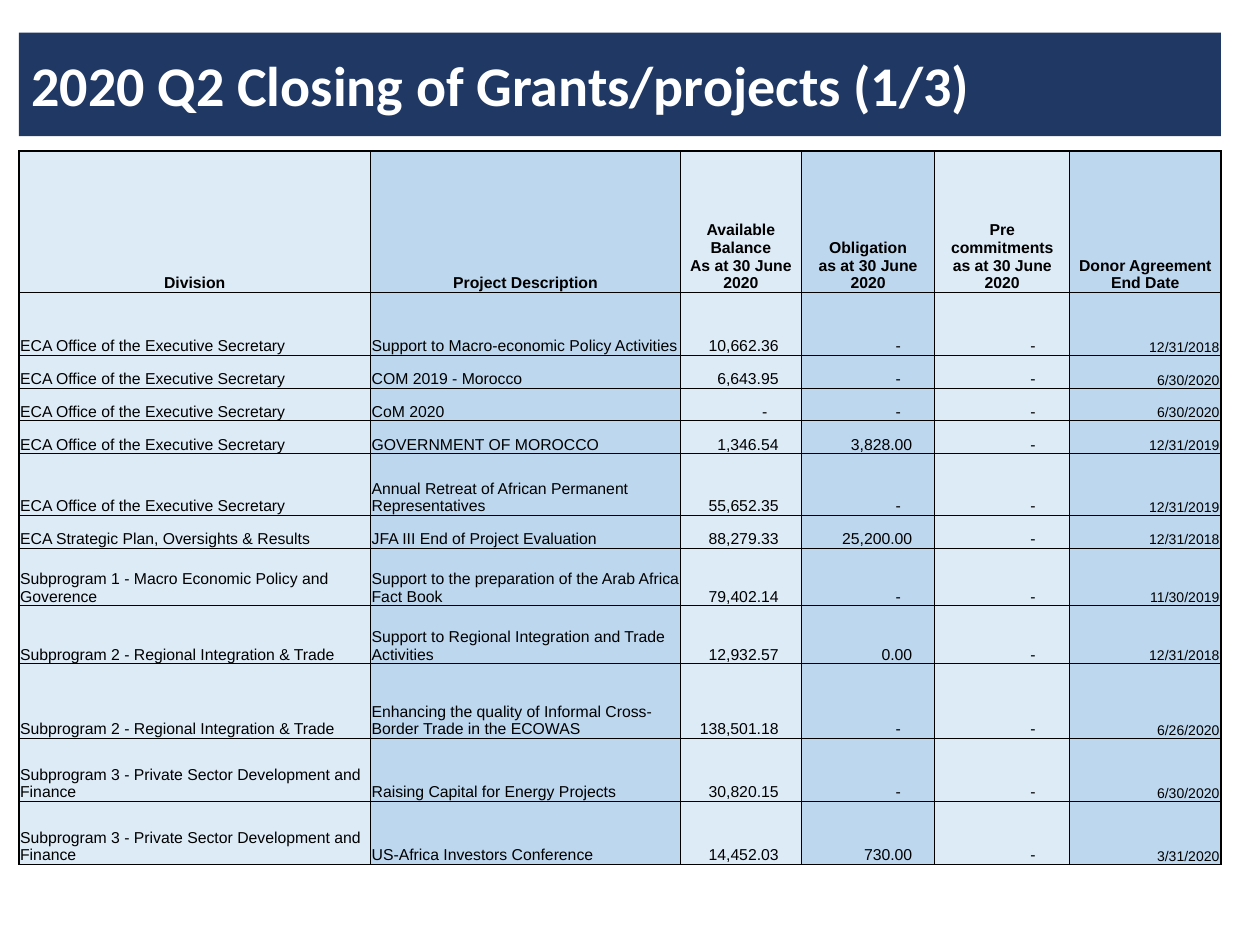
from lxml.etree import SubElement
from pptx import Presentation
from pptx.dml.color import RGBColor
from pptx.enum.text import MSO_ANCHOR, MSO_AUTO_SIZE, PP_ALIGN
from pptx.oxml.ns import qn
from pptx.util import Inches, Pt

COLORS = {"navy": "203864", "pale": "DDEBF7", "blue": "BDD7EE",
          "black": "000000", "white": "FFFFFF"}

COLUMN_WIDTHS = [2.79, 2.46, 0.96, 1.06, 1.07, 1.2]
ROW_HEIGHTS = [1.12, 0.5, 0.26, 0.26, 0.26, 0.49, 0.26, 0.46, 0.46, 0.59, 0.5, 0.5]
AMOUNT_COLUMNS = (2, 3, 4)
DATE_COLUMN = 5

HEADINGS = ["Division", "Project Description",
            "Available Balance\vAs at 30 June 2020",
            "Obligation\vas at 30 June 2020",
            "Pre commitments\vas at 30 June 2020",
            "Donor Agreement End Date"]

OFFICE = "ECA Office of the Executive Secretary"
TRADE = "Subprogram 2 - Regional Integration & Trade"
PRIVATE = "Subprogram 3 - Private Sector Development and Finance"
GRANTS = [
    [OFFICE, "Support to Macro-economic Policy Activities", "10,662.36", "-", "-", "12/31/2018"],
    [OFFICE, "COM 2019 - Morocco", "6,643.95", "-", "-", "6/30/2020"],
    [OFFICE, "CoM 2020", "-", "-", "-", "6/30/2020"],
    [OFFICE, "GOVERNMENT OF MOROCCO", "1,346.54", "3,828.00", "-", "12/31/2019"],
    [OFFICE, "Annual Retreat of African Permanent Representatives",
     "55,652.35", "-", "-", "12/31/2019"],
    ["ECA Strategic Plan, Oversights & Results", "JFA III End of Project Evaluation",
     "88,279.33", "25,200.00", "-", "12/31/2018"],
    ["Subprogram 1 - Macro Economic Policy and Goverence",
     "Support to the preparation of the Arab Africa Fact Book",
     "79,402.14", "-", "-", "11/30/2019"],
    [TRADE, "Support to Regional Integration and Trade Activities",
     "12,932.57", "0.00", "-", "12/31/2018"],
    [TRADE, "Enhancing the quality of Informal Cross-Border Trade in the ECOWAS",
     "138,501.18", "-", "-", "6/26/2020"],
    [PRIVATE, "Raising Capital for Energy Projects", "30,820.15", "-", "-", "6/30/2020"],
    [PRIVATE, "US-Africa Investors Conference", "14,452.03", "730.00", "-", "3/31/2020"],
]


class GrantSlide:
    def __init__(self, page):
        self.page = page
        self.title_font = "Calibri"
        self.table_font = "Arial"

    def color(self, name):
        return RGBColor.from_string(COLORS[name])

    def style(self, paragraph, font, size, color, bold, align):
        paragraph.alignment = align
        paragraph.font.name = font
        paragraph.font.size = Pt(size)
        paragraph.font.bold = bold
        paragraph.font.color.rgb = self.color(color)

    def add_title(self, text, left, top, width, height):
        """Turn the title placeholder into a filled rounded banner."""
        title = self.page.shapes.title
        title.left, title.top = Inches(left), Inches(top)
        title.width, title.height = Inches(width), Inches(height)
        geometry = SubElement(title.element.spPr, qn("a:prstGeom"), prst="roundRect")
        SubElement(geometry, qn("a:avLst"))
        title.fill.solid()
        title.fill.fore_color.rgb = self.color("navy")
        frame = title.text_frame
        frame.text = text
        frame.word_wrap = True
        frame.auto_size = MSO_AUTO_SIZE.NONE
        frame.vertical_anchor = MSO_ANCHOR.MIDDLE
        frame.margin_left = frame.margin_right = Inches(0.1)
        frame.margin_top = frame.margin_bottom = Inches(0.1)
        self.style(frame.paragraphs[0], self.title_font, 32, "white", True, PP_ALIGN.LEFT)

    def add_table(self, rows, left, top, widths, heights):
        frame = self.page.shapes.add_table(
            len(rows), len(widths), Inches(left), Inches(top),
            Inches(sum(widths)), Inches(sum(heights)))
        table = frame.table
        table.first_row = table.horz_banding = False
        for column, width in zip(table.columns, widths):
            column.width = Inches(width)
        for row, height in zip(table.rows, heights):
            row.height = Inches(height)
        for row_index, values in enumerate(rows):
            for column_index, value in enumerate(values):
                cell = table.cell(row_index, column_index)
                self.fill_cell(cell, value, row_index, column_index)
                self.add_borders(cell, {
                    "L": 1 if column_index == 0 else 0.5,
                    "R": 1 if column_index == len(widths) - 1 else 0.5,
                    "T": 1 if row_index == 0 else 0.5,
                    "B": 0.5})

    def fill_cell(self, cell, value, row_index, column_index):
        size, align, left, right = 9, PP_ALIGN.LEFT, 0.01, 0.01
        header = row_index == 0
        if header:
            align, left, right = PP_ALIGN.CENTER, 0.03, 0.03
        elif column_index in AMOUNT_COLUMNS:
            align = PP_ALIGN.RIGHT
            right = 0.27 if value == "-" else 0.18
        elif column_index == DATE_COLUMN:
            size, align = 8, PP_ALIGN.RIGHT
        cell.text = value
        cell.vertical_anchor = MSO_ANCHOR.BOTTOM
        cell.margin_left, cell.margin_right = Inches(left), Inches(right)
        cell.margin_top, cell.margin_bottom = Inches(0.01), Inches(0)
        cell.fill.solid()
        cell.fill.fore_color.rgb = self.color("blue" if column_index % 2 else "pale")
        self.style(cell.text_frame.paragraphs[0], self.table_font, size, "black", header, align)

    def add_borders(self, cell, weights):
        """Draw cell edges; border elements must come before the fill."""
        properties = cell._tc.get_or_add_tcPr()
        for position, (side, weight) in enumerate(weights.items()):
            line = SubElement(properties, qn(f"a:ln{side}"), w=str(Pt(weight)))
            fill = SubElement(line, qn("a:solidFill"))
            SubElement(fill, qn("a:srgbClr"), val=COLORS["black"])
            properties.insert(position, line)


def main():
    deck = Presentation()
    deck.slide_width, deck.slide_height = Inches(10), Inches(7.5)
    slide = GrantSlide(deck.slides.add_slide(deck.slide_layouts[5]))
    slide.add_title("2020 Q2 Closing of Grants/projects (1/3)", 0.15, 0.26, 9.54, 0.82)
    slide.add_table([HEADINGS] + GRANTS, 0.15, 1.2, COLUMN_WIDTHS, ROW_HEIGHTS)
    deck.save("out.pptx")


if __name__ == "__main__":
    main()
